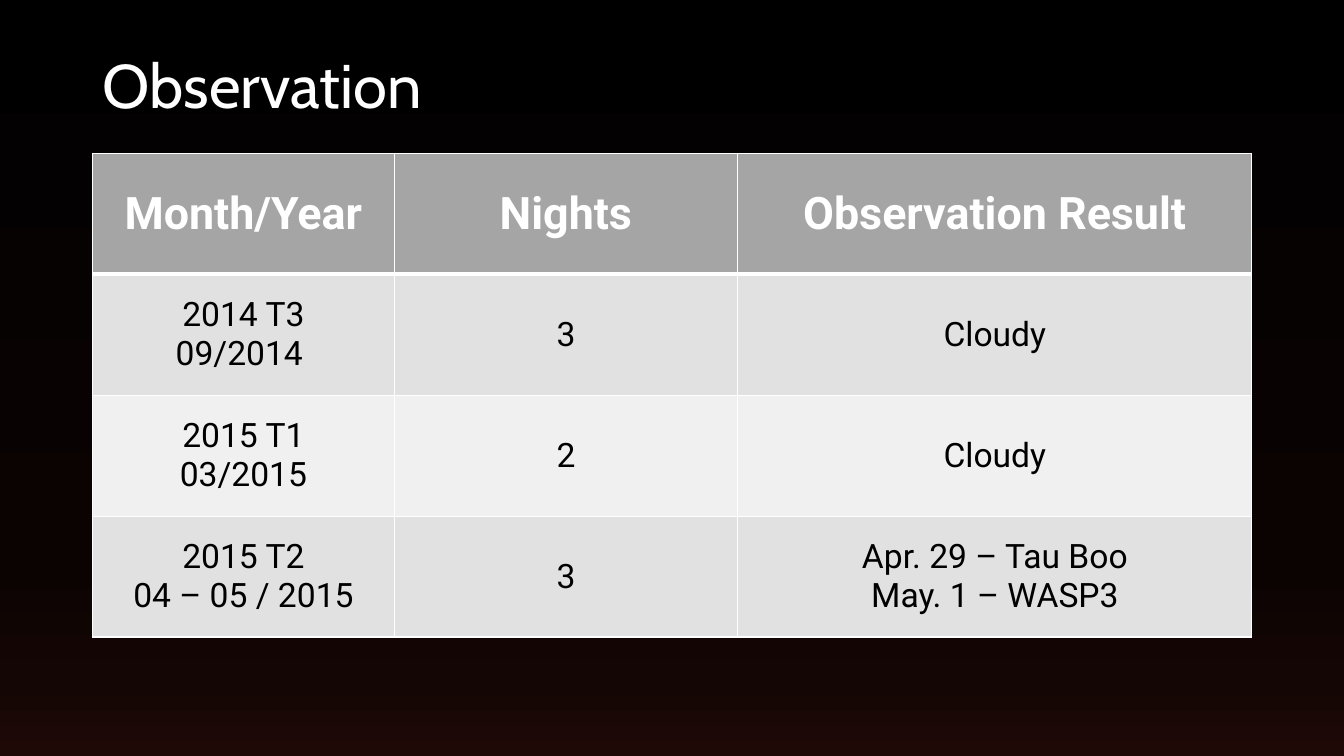
from lxml.etree import SubElement
from pptx import Presentation
from pptx.dml.color import RGBColor
from pptx.enum.text import MSO_ANCHOR, PP_ALIGN
from pptx.oxml.ns import qn
from pptx.util import Pt

COLORS = {
    "white": "FFFFFF",
    "black": "000000",
    "header": "A5A5A5",
    "odd": "E1E1E1",
    "even": "F0F0F0",
}
BACKDROP = [(0, "000000"), (75, "0A0302"), (90, "140604"), (100, "1E0906")]
COLUMN_WIDTHS = [215.28, 245.52, 367.2]
ROW_HEIGHT = 86.4
OBSERVATIONS = [
    ["Month/Year", "Nights", "Observation Result"],
    ["2014 T3\v09/2014 ", "3", "Cloudy"],
    ["2015 T1\v03/2015", "2", "Cloudy"],
    ["2015 T2\v04 – 05 / 2015", "3", "Apr. 29 – Tau Boo\nMay. 1 – WASP3"],
]


class SlideBuilder:
    """Draws styled elements on one slide, with lengths in points."""

    heading_font = "Cabin"
    body_font = "Roboto"

    def __init__(self, page):
        self.page = page

    def background(self, stops):
        fill = self.page.background.fill
        fill.gradient()
        fill.gradient_angle = 270
        stop_list = next(self.page.element.iter(qn("a:gsLst")))
        for stop in list(stop_list):
            stop_list.remove(stop)
        for percent, color in stops:
            stop = SubElement(stop_list, qn("a:gs"), pos=str(percent * 1000))
            SubElement(stop, qn("a:srgbClr"), val=color)

    def format_text(self, frame, font, size, color, bold=False, align=PP_ALIGN.LEFT):
        for paragraph in frame.paragraphs:
            paragraph.alignment = align
            for span in paragraph.runs:
                span.font.name = font
                span.font.size = Pt(size)
                span.font.bold = bold
                span.font.color.rgb = RGBColor.from_string(COLORS[color])

    def title(self, text, left, top, width, height):
        box = self.page.shapes.add_textbox(Pt(left), Pt(top), Pt(width), Pt(height))
        frame = box.text_frame
        frame.word_wrap = True
        frame.vertical_anchor = MSO_ANCHOR.MIDDLE
        frame.text = text
        frame.paragraphs[0].line_spacing = 0.9
        self.format_text(frame, self.heading_font, 44, "white")

    def borders(self, cell, top, bottom):
        properties = cell._tc.get_or_add_tcPr()
        for side, width in (("L", 1), ("R", 1), ("T", top), ("B", bottom)):
            line = SubElement(properties, qn(f"a:ln{side}"), w=str(Pt(width)))
            solid = SubElement(line, qn("a:solidFill"))
            SubElement(solid, qn("a:srgbClr"), val=COLORS["white"])

    def cell(self, cell, text, row):
        is_header = row == 0
        self.borders(cell, 3 if row == 1 else 1, 3 if is_header else 1)
        fill_name = "header" if is_header else "odd" if row % 2 else "even"
        cell.fill.solid()
        cell.fill.fore_color.rgb = RGBColor.from_string(COLORS[fill_name])
        cell.vertical_anchor = MSO_ANCHOR.MIDDLE
        cell.text_frame.text = text
        size, color = (32, "white") if is_header else (24, "black")
        self.format_text(
            cell.text_frame, self.body_font, size, color, is_header, PP_ALIGN.CENTER
        )

    def table(self, rows, left, top, widths, row_height):
        table = self.page.shapes.add_table(
            len(rows), len(widths), Pt(left), Pt(top),
            Pt(sum(widths)), Pt(row_height * len(rows)),
        ).table
        for column, width in zip(table.columns, widths):
            column.width = Pt(width)
        for row, texts in enumerate(rows):
            table.rows[row].height = Pt(row_height)
            for column, text in enumerate(texts):
                self.cell(table.cell(row, column), text, row)


def main():
    deck = Presentation()
    deck.slide_width, deck.slide_height = Pt(960), Pt(540)
    builder = SlideBuilder(deck.slides.add_slide(deck.slide_layouts[6]))
    builder.background(BACKDROP)
    builder.title("Observation", 66.24, 28.8, 828, 69.12)
    builder.table(OBSERVATIONS, 66.24, 109.44, COLUMN_WIDTHS, ROW_HEIGHT)
    deck.save("out.pptx")


if __name__ == "__main__":
    main()
